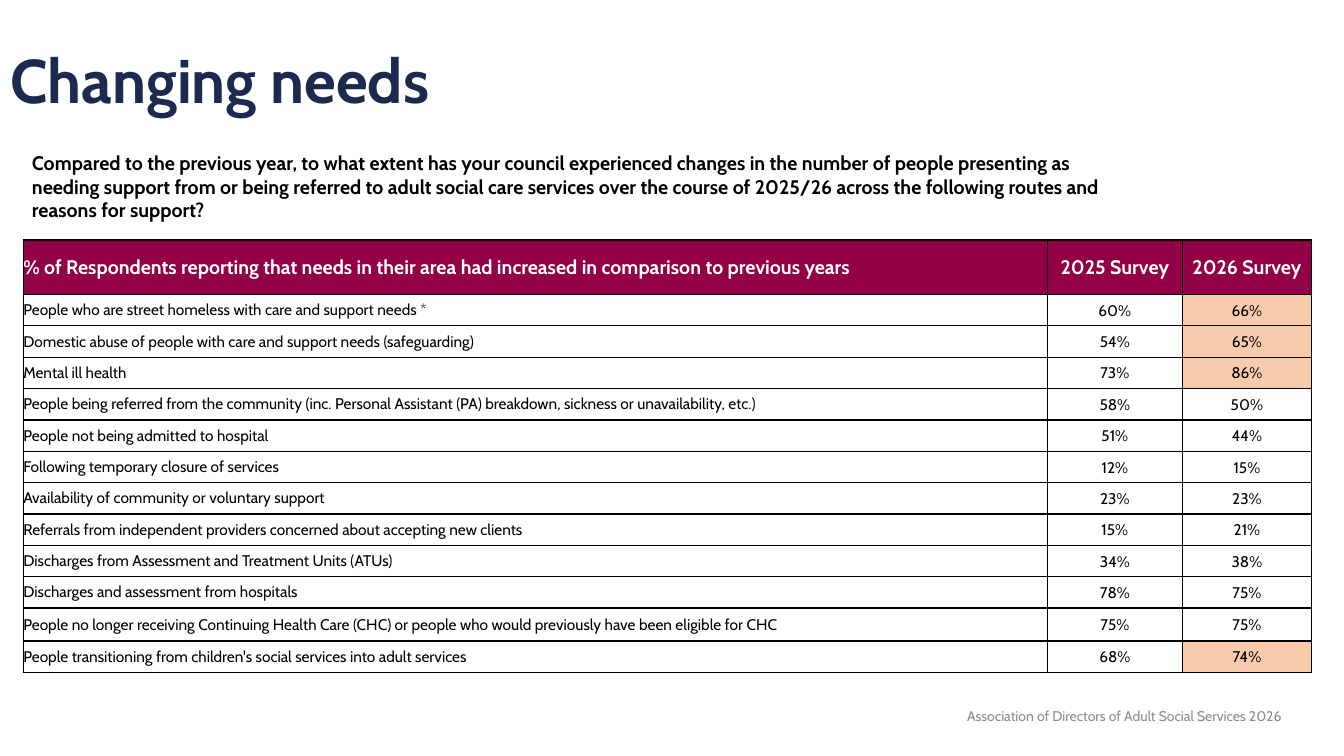
from dataclasses import dataclass

from lxml.etree import SubElement
from pptx import Presentation
from pptx.dml.color import RGBColor
from pptx.enum.text import MSO_ANCHOR, PP_ALIGN
from pptx.oxml.ns import qn
from pptx.util import Pt

FONT = "Cabin"
COLOURS = {
    "navy": "1D2A50",
    "plum": "920146",
    "peach": "F8CBAD",
    "white": "FFFFFF",
    "black": "000000",
    "grey": "8C8C8C",
}


@dataclass
class Style:
    size: float
    colour: str
    bold: bool = False
    align: PP_ALIGN = PP_ALIGN.LEFT


@dataclass
class Need:
    label: str
    before: int
    now: int
    marked: bool = False
    height: float = 22.4


HEADS = (
    "% of Respondents reporting that needs in their area had increased in comparison to previous years",
    "2025 Survey",
    "2026 Survey",
)
WIDTHS = (731.5, 96.5, 92.2)
HEAD_HEIGHT = 39
NEEDS = [
    Need("People who are street homeless with care and support needs *", 60, 66, True),
    Need("Domestic abuse of people with care and support needs (safeguarding)", 54, 65, True),
    Need("Mental ill health", 73, 86, True),
    Need("People being referred from the community (inc. Personal Assistant (PA) breakdown, "
         "sickness or unavailability, etc.)", 58, 50),
    Need("People not being admitted to hospital", 51, 44),
    Need("Following temporary closure of services", 12, 15),
    Need("Availability of community or voluntary support", 23, 23),
    Need("Referrals from independent providers concerned about accepting new clients", 15, 21),
    Need("Discharges from Assessment and Treatment Units (ATUs)", 34, 38),
    Need("Discharges and assessment from hospitals", 78, 75),
    Need("People no longer receiving Continuing Health Care (CHC) or people who would "
         "previously have been eligible for CHC", 75, 75, height=23.6),
    Need("People transitioning from children's social services into adult services", 68, 74, True),
]


def colour(name: str) -> RGBColor:
    return RGBColor.from_string(COLOURS[name])


def apply(target, values: dict) -> None:
    for name, value in values.items():
        setattr(target, name, value)


def write(frame, text: str, style: Style):
    """Put one styled paragraph in a text frame."""
    para = frame.paragraphs[0]
    para.alignment = style.align
    run = para.add_run()
    run.text = text
    apply(run.font, {"name": FONT, "size": Pt(style.size), "bold": style.bold})
    run.font.color.rgb = colour(style.colour)
    return para


def place(shape, left: float, top: float, width: float, height: float) -> None:
    apply(shape, {"left": Pt(left), "top": Pt(top), "width": Pt(width), "height": Pt(height)})


def add_text(slide, box: tuple, text: str, style: Style, anchor: MSO_ANCHOR) -> None:
    frame = slide.shapes.add_textbox(*map(Pt, box)).text_frame
    apply(frame, {"word_wrap": True, "vertical_anchor": anchor})
    write(frame, text, style)


def frame_cell(cell) -> None:
    """Draw a thin black line on all four sides."""
    props = cell._tc.get_or_add_tcPr()
    for index, side in enumerate(("a:lnL", "a:lnR", "a:lnT", "a:lnB")):
        line = SubElement(props, qn(side), w=str(Pt(1)))
        fill = SubElement(line, qn("a:solidFill"))
        SubElement(fill, qn("a:srgbClr"), val=COLOURS["black"])
        props.remove(line)
        props.insert(index, line)


def fill_cell(cell, text: str, style: Style, fill: str, inset: float) -> None:
    apply(cell, {
        "margin_left": Pt(inset), "margin_right": Pt(inset), "margin_top": Pt(inset),
        "margin_bottom": Pt(0), "vertical_anchor": MSO_ANCHOR.MIDDLE,
    })
    cell.fill.solid()
    cell.fill.fore_color.rgb = colour(fill)
    frame_cell(cell)
    write(cell.text_frame, text, style)


def add_grid(slide, left: float, top: float) -> None:
    heights = [HEAD_HEIGHT] + [need.height for need in NEEDS]
    size = (left, top, sum(WIDTHS), sum(heights))
    grid = slide.shapes.add_table(len(heights), len(WIDTHS), *map(Pt, size)).table
    apply(grid, {"first_row": False, "horz_banding": False})
    for column, width in zip(grid.columns, WIDTHS):
        column.width = Pt(width)
    for row, height in zip(grid.rows, heights):
        row.height = Pt(height)

    # Heading row, then one row per need
    aligns = (PP_ALIGN.LEFT, PP_ALIGN.CENTER, PP_ALIGN.CENTER)
    for col, (head, align) in enumerate(zip(HEADS, aligns)):
        fill_cell(grid.cell(0, col), head, Style(14, "white", True, align), "plum", 0)
    for row, need in enumerate(NEEDS, 1):
        texts = (need.label, f"{need.before}%", f"{need.now}%")
        fills = ("white", "white", "peach" if need.marked else "white")
        for col, (text, fill, align) in enumerate(zip(texts, fills, aligns)):
            inset = 0.7 if col else 0
            fill_cell(grid.cell(row, col), text, Style(11, "black", align=align), fill, inset)


def main() -> None:
    deck = Presentation()
    apply(deck, {"slide_width": Pt(960), "slide_height": Pt(540)})
    slide = deck.slides.add_slide(deck.slide_layouts[5])

    # Title
    title = slide.shapes.title
    place(title, 0, 8, 828, 104)
    title.text_frame.vertical_anchor = MSO_ANCHOR.MIDDLE
    write(title.text_frame, "Changing needs", Style(44, "navy", True)).line_spacing = 0.9

    # Source line
    add_text(slide, (598.3, 496.8, 324, 28.8),
             "Association of Directors of Adult Social Services 2026",
             Style(10, "grey", align=PP_ALIGN.RIGHT), MSO_ANCHOR.MIDDLE)

    # Survey results
    add_grid(slide, 16.6, 171.4)

    # Survey question
    add_text(slide, (15.8, 104.4, 797, 58.3),
             "Compared to the previous year, to what extent has your council experienced changes "
             "in the number of people presenting as needing support from or being referred to "
             "adult social care services over the course of 2025/26 across the following routes "
             "and reasons for support?",
             Style(14, "black", True), MSO_ANCHOR.TOP)

    deck.save("out.pptx")


if __name__ == "__main__":
    main()
